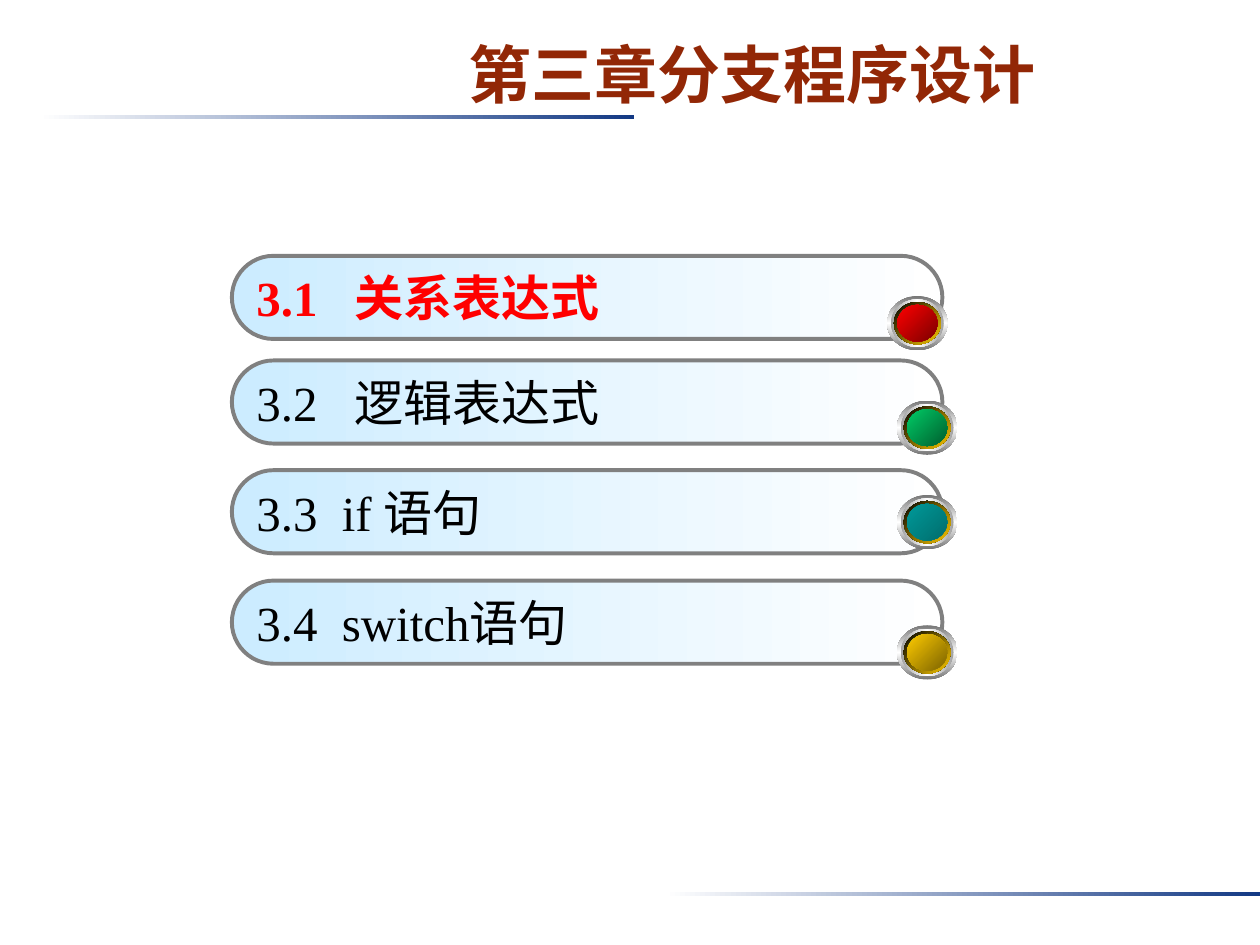
from copy import deepcopy
from dataclasses import dataclass

from lxml import etree
from pptx import Presentation
from pptx import util as u
from pptx.dml.color import RGBColor
from pptx.enum import shapes, text
from pptx.oxml import ns

Pt = u.Pt
SHAPE = shapes.MSO_SHAPE


@dataclass(frozen=True)
class Theme:
    title: str = "922706"
    body: str = "000000"
    hot: str = "FF0000"
    edge: str = "808080"
    rule: tuple = ("FFFFFF", "133984")
    bar: tuple = ("CCECFF", "FFFFFF")
    head_font: str = "Arial"
    body_font: str = "Times New Roman"
    head_size: float = 36
    body_size: float = 28
    edge_size: float = 2.25


@dataclass(frozen=True)
class Layer:
    width: float
    height: float
    tints: tuple
    angle: int


@dataclass(frozen=True)
class Row:
    number: str
    label: str
    top: float
    tab: float
    dot_x: float
    dot_y: float
    tints: tuple
    hot: bool = False


THEME = Theme()
BAR_LEFT, BAR_WIDTH, BAR_HEIGHT = 132.5, 406, 47.5
RULE_WIDTH, RULE_HEIGHT = 340, 2.2
FACE = (23, 21)
LAYERS = (
    Layer(34.5, 31, ("767676", "FFFFFF", "767676"), 90),
    Layer(30.2, 27.2, ("A2A2A2", "FFFFFF", "A2A2A2"), 0),
    Layer(26.8, 24.2, ("FFFFFF", "009999", "FFFFFF"), 45),
    Layer(26.8, 24.2, ("000000", "FFCC00"), 45),
    Layer(*FACE, ("007575", "009999", "007575"), 315),
)
ROWS = (
    Row("3.1", "关系表达式", 146.2, 56, 524.2, 184.7, ("FF0000", "7C0000"), True),
    Row("3.2", "逻辑表达式", 206, 56, 529.8, 244.4, ("00CC66", "005E2F")),
    Row("3.3", "if 语句", 268.7, 48.8, 529.8, 298.4, ("009999", "006D6D")),
    Row("3.4", "switch语句", 331.8, 48.8, 529.8, 372.8, ("FFCC00", "7C6300")),
)


def blend(shape, tints: tuple, angle: int = 0) -> None:
    fill = shape.fill
    fill.gradient()
    stops = shape._element.spPr.find(".//" + ns.qn("a:gsLst"))
    for _ in tints[2:]:
        stops.append(deepcopy(stops[-1]))
    for i, (stop, tint) in enumerate(zip(fill.gradient_stops, tints)):
        stop.position = i / (len(tints) - 1)
        stop.color.rgb = RGBColor.from_string(tint)
    fill.gradient_angle = (360 - angle) % 360


def add_form(tree, kind, left: float, top: float, width: float,
             height: float, tints: tuple, angle: int = 0):
    shape = tree.add_shape(kind, Pt(left), Pt(top), Pt(width), Pt(height))
    shape.shadow.inherit = False
    shape.line.fill.background()
    blend(shape, tints, angle)
    return shape


def add_run(para, words: str, font: str, size: float, tint: str, bold: bool) -> None:
    run = para.add_run()
    run.text = words
    run.font.name = font
    run.font.size = Pt(size)
    run.font.bold = bold
    run.font.color.rgb = RGBColor.from_string(tint)


def add_title(tree) -> None:
    box = tree.add_textbox(Pt(139), Pt(14.4), Pt(581), Pt(54))
    frame = box.text_frame
    frame.word_wrap = True
    frame.vertical_anchor = text.MSO_ANCHOR.MIDDLE
    frame.margin_top, frame.margin_bottom = Pt(4.3), Pt(3.6)
    para = frame.paragraphs[0]
    para.alignment = text.PP_ALIGN.CENTER
    add_run(para, "第三章分支程序设计", THEME.head_font, THEME.head_size,
            THEME.title, True)


def add_bar(tree, row: Row) -> None:
    bar = add_form(tree, SHAPE.ROUNDED_RECTANGLE, BAR_LEFT, row.top,
                   BAR_WIDTH, BAR_HEIGHT, THEME.bar)
    bar.adjustments[0] = 0.5
    bar.line.color.rgb = RGBColor.from_string(THEME.edge)
    bar.line.width = Pt(THEME.edge_size)
    frame = bar.text_frame
    frame.vertical_anchor = text.MSO_ANCHOR.MIDDLE
    para = frame.paragraphs[0]
    para.alignment = text.PP_ALIGN.LEFT
    tabs = etree.SubElement(para._p.get_or_add_pPr(), ns.qn("a:tabLst"))
    etree.SubElement(tabs, ns.qn("a:tab"), pos=str(Pt(row.tab)), algn="l")
    tint = THEME.hot if row.hot else THEME.body
    for words in (row.number + "\t", row.label):
        add_run(para, words, THEME.body_font, THEME.body_size, tint, row.hot)


def add_dot(tree, row: Row) -> None:
    for layer in (*LAYERS, Layer(*FACE, row.tints, 45)):
        add_form(tree, SHAPE.OVAL, row.dot_x - layer.width / 2,
                 row.dot_y - layer.height / 2, layer.width, layer.height,
                 layer.tints, layer.angle)


def main() -> None:
    deck = Presentation()
    deck.slide_width, deck.slide_height = Pt(720), Pt(540)
    tree = deck.slides.add_slide(deck.slide_layouts[6]).shapes
    for left, top in ((22.3, 65.6), (720 - RULE_WIDTH, 509.8)):
        add_form(tree, SHAPE.RECTANGLE, left, top, RULE_WIDTH, RULE_HEIGHT, THEME.rule)
    add_title(tree)
    for row in ROWS:
        group = tree.add_group_shape().shapes
        add_bar(group, row)
        add_dot(group, row)
    deck.save("out.pptx")


if __name__ == "__main__":
    main()
